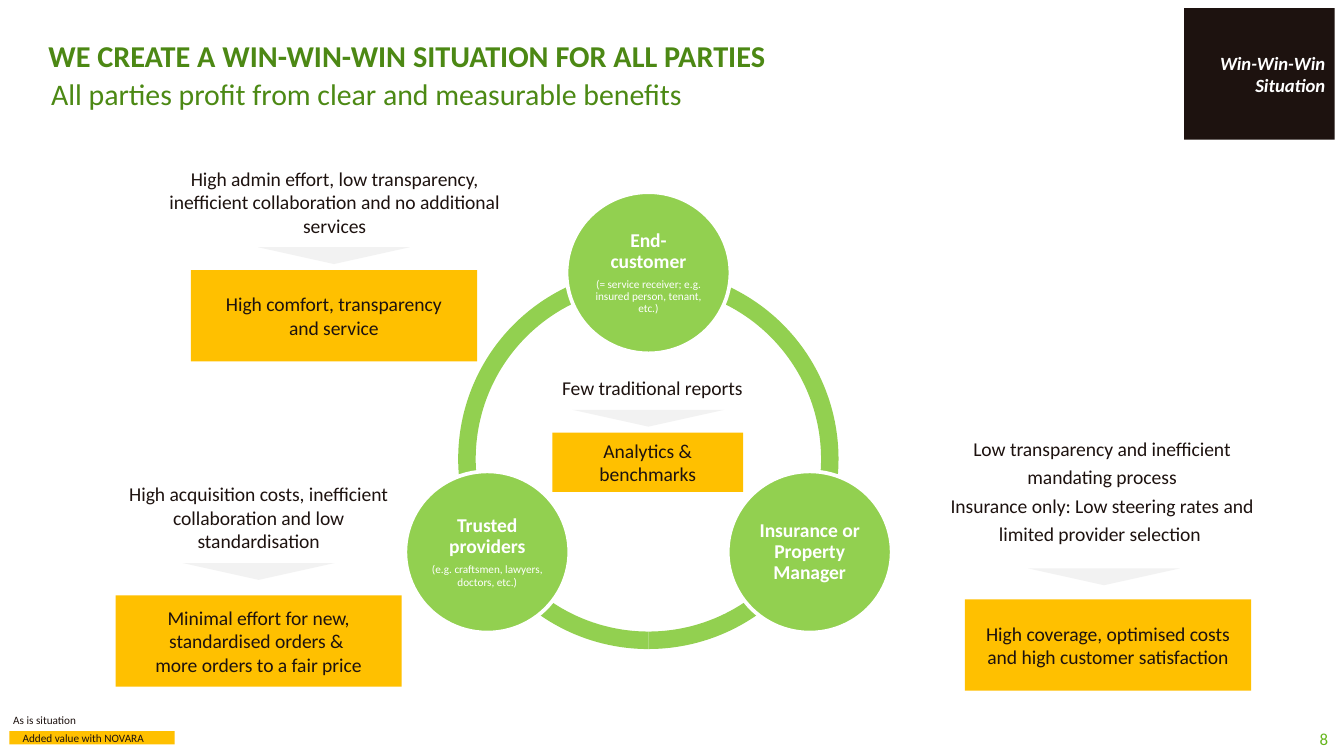
from copy import deepcopy
from math import cos, radians, sin

from pptx import Presentation, util as u
from pptx.dml.color import RGBColor
from pptx.enum import shapes, text
from pptx.oxml import ns, xmlchemy

CELL = 0.1
COLUMNS, ROWS = 100, 56.25
FONT = "Calibri"
INK = RGBColor(0x1D, 0x12, 0x0F)
WHITE = RGBColor(0xFF, 0xFF, 0xFF)
TITLE_GREEN = RGBColor(0x4C, 0x88, 0x14)
SUBTITLE_GREEN = RGBColor(0x4C, 0x89, 0x14)
NUMBER_GREEN = RGBColor(0x65, 0xB6, 0x1B)
RING_GREEN = RGBColor(0x92, 0xD0, 0x50)
AMBER = RGBColor(0xFF, 0xC0, 0x00)
PALE_GREY = RGBColor(0xF2, 0xF2, 0xF2)

LEFT, CENTER, RIGHT = text.PP_ALIGN.LEFT, text.PP_ALIGN.CENTER, text.PP_ALIGN.RIGHT
TOP, MIDDLE = text.MSO_ANCHOR.TOP, text.MSO_ANCHOR.MIDDLE
WIDE_INSETS, BOX_INSETS = (1, 0.5), (0.7, 0.4)

RING_CENTER, RING_SIZE = (48.25, 34.15), 28.3
RING_ARCS = [(90, 162), (18, 90), (162, 18)]
PARTY_ORBIT, PARTY_SIZE = 13.85, (12.2, 12)
PARTIES = [
    (-90, "End- customer", "(= service receiver; e.g. insured person, tenant, etc.)"),
    (30, "Insurance or Property Manager", None),
    (150, "Trusted providers", "(e.g. craftsmen, lawyers, doctors, etc.)"),
]

BENEFITS = [
    ((24.9, 24.85, 24.85), (11.9, 18.4, 20.1), (27.2, 6.3), (21.3, 6.8), 1,
     "High admin effort, low transparency, inefficient collaboration and no additional services",
     "High comfort, transparency\nand service"),
    ((19.25, 19.25, 19.25), (35.4, 41.9, 44.3), (21.7, 6.3), (21.3, 6.8), 1,
     "High acquisition costs, inefficient collaboration and low standardisation",
     "Minimal effort for new, standardised orders & \nmore orders to a fair price"),
    ((82, 82.15, 82.45), (31.7, 42.3, 44.6), (27.2, 9.4), (21.3, 6.8), 1.2,
     "Low transparency and inefficient mandating process\n"
     "Insurance only: Low steering rates and limited provider selection ",
     "High coverage, optimised costs and high customer satisfaction"),
    ((48.55, 48.25, 48.2), (27.5, 30.5, 32.2), (21.7, 2.8), (14.2, 4.4), 1,
     "Few traditional reports", "Analytics &\nbenchmarks"),
]


def cells(*counts):
    return [u.Inches(count * CELL) for count in counts]


def write(paragraph, content, size=10.5, color=INK, bold=False, italic=False,
          align=LEFT, spacing=1, after=0):
    paragraph.text = content
    paragraph.alignment = align
    paragraph.line_spacing = spacing
    paragraph.space_before = u.Pt(0)
    paragraph.space_after = u.Pt(after)
    for run in paragraph.runs:
        run.font.name, run.font.size = FONT, u.Pt(size)
        run.font.bold, run.font.italic = bold, italic
        run.font.color.rgb = color
    for line_break in paragraph._p.findall(ns.qn("a:br")):
        line_break.insert(0, deepcopy(paragraph.runs[0].font._element))


def prepare_frame(shape, anchor=TOP, insets=WIDE_INSETS):
    frame = shape.text_frame
    frame.word_wrap = True
    frame.auto_size = text.MSO_AUTO_SIZE.NONE
    frame.vertical_anchor = anchor
    frame.margin_left = frame.margin_right = cells(insets[0])[0]
    frame.margin_top = frame.margin_bottom = cells(insets[1])[0]
    return frame


def add_label(slide, place, content, anchor=TOP, **style):
    label = slide.shapes.add_textbox(*cells(*place))
    write(prepare_frame(label, anchor).paragraphs[0], content, **style)


def add_filled(slide, preset, place, fill):
    shape = slide.shapes.add_shape(preset, *cells(*place))
    shape.shadow.inherit = False
    shape.fill.solid()
    shape.fill.fore_color.rgb = fill
    shape.line.fill.background()
    return shape


def add_box(slide, place, content, fill=AMBER, anchor=MIDDLE, insets=BOX_INSETS, **style):
    box = add_filled(slide, shapes.MSO_SHAPE.RECTANGLE, place, fill)
    write(prepare_frame(box, anchor, insets).paragraphs[0], content, **style)


def fill_placeholder(placeholder, place, content, anchor=TOP, **style):
    placeholder.left, placeholder.top, placeholder.width, placeholder.height = cells(*place)
    paragraph = prepare_frame(placeholder, anchor).paragraphs[0]
    properties = paragraph._p.get_or_add_pPr()
    properties.set("marL", "0")
    properties.set("indent", "0")
    properties.append(xmlchemy.OxmlElement("a:buNone"))
    write(paragraph, content, **style)


def add_ring(slide):
    left, top = (middle - RING_SIZE / 2 for middle in RING_CENTER)
    for start, end in RING_ARCS:
        arc = add_filled(slide, shapes.MSO_SHAPE.BLOCK_ARC,
                         (left, top, RING_SIZE, RING_SIZE), RING_GREEN)
        arc.adjustments[0] = start * 0.6
        arc.adjustments[1] = end * 0.6
        arc.adjustments[2] = 0.046


def add_party(slide, angle, name, detail):
    width, height = PARTY_SIZE
    left = RING_CENTER[0] + PARTY_ORBIT * cos(radians(angle)) - width / 2
    top = RING_CENTER[1] + PARTY_ORBIT * sin(radians(angle)) - height / 2
    circle = add_filled(slide, shapes.MSO_SHAPE.OVAL, (left, top, width, height), RING_GREEN)
    circle.line.color.rgb = WHITE
    circle.line.width = u.Pt(2)
    frame = prepare_frame(circle, MIDDLE, (0.2, 0.2))
    style = dict(color=WHITE, align=CENTER, spacing=0.9)
    write(frame.paragraphs[0], name, bold=True, after=3.5, **style)
    if detail:
        write(frame.add_paragraph(), detail, size=6, after=2, **style)


def add_benefit(slide, centers, tops, before_size, after_size, spacing, before, after):
    sizes = [before_size, (11.3, 1.25), after_size]
    before_place, arrow_place, after_place = [
        (center - size[0] / 2, top, *size)
        for center, top, size in zip(centers, tops, sizes)]
    add_label(slide, before_place, before, align=CENTER, spacing=spacing)
    arrow = add_filled(slide, shapes.MSO_SHAPE.ISOSCELES_TRIANGLE, arrow_place, PALE_GREY)
    arrow._element.spPr.xfrm.set("flipV", "1")
    add_box(slide, after_place, after, align=CENTER)


def main():
    deck = Presentation()
    deck.slide_width, deck.slide_height = cells(COLUMNS, ROWS)
    slide = deck.slides.add_slide(deck.slide_layouts[1])

    add_box(slide, (88.1, 0.6, 11.2, 9.8), "Win-Win-Win\nSituation", fill=INK,
            size=10, color=WHITE, bold=True, italic=True, align=RIGHT)
    fill_placeholder(slide.shapes.title, (2.6, 2.3, 82.8, 3.6),
                     "WE CREATE A WIN-WIN-WIN SITUATION FOR ALL PARTIES", MIDDLE,
                     size=16.2, color=TITLE_GREEN, bold=True)
    fill_placeholder(slide.placeholders[1], (2.8, 5.1, 85.7, 3.6),
                     "All parties profit from clear and measurable benefits",
                     size=16, color=SUBTITLE_GREEN)

    add_ring(slide)
    for party in PARTIES:
        add_party(slide, *party)
    for benefit in BENEFITS:
        add_benefit(slide, *benefit)

    add_label(slide, (0, 52.6, 12.9, 2), "As is situation", size=6)
    add_box(slide, (0.7, 54.4, 12.3, 1), "Added value with NOVARA",
            anchor=TOP, insets=(1, 0), size=6)
    add_label(slide, (76.5, 53.5, 23.3, 3), "8", MIDDLE,
              size=9, color=NUMBER_GREEN, align=RIGHT)
    deck.save("out.pptx")


if __name__ == "__main__":
    main()
